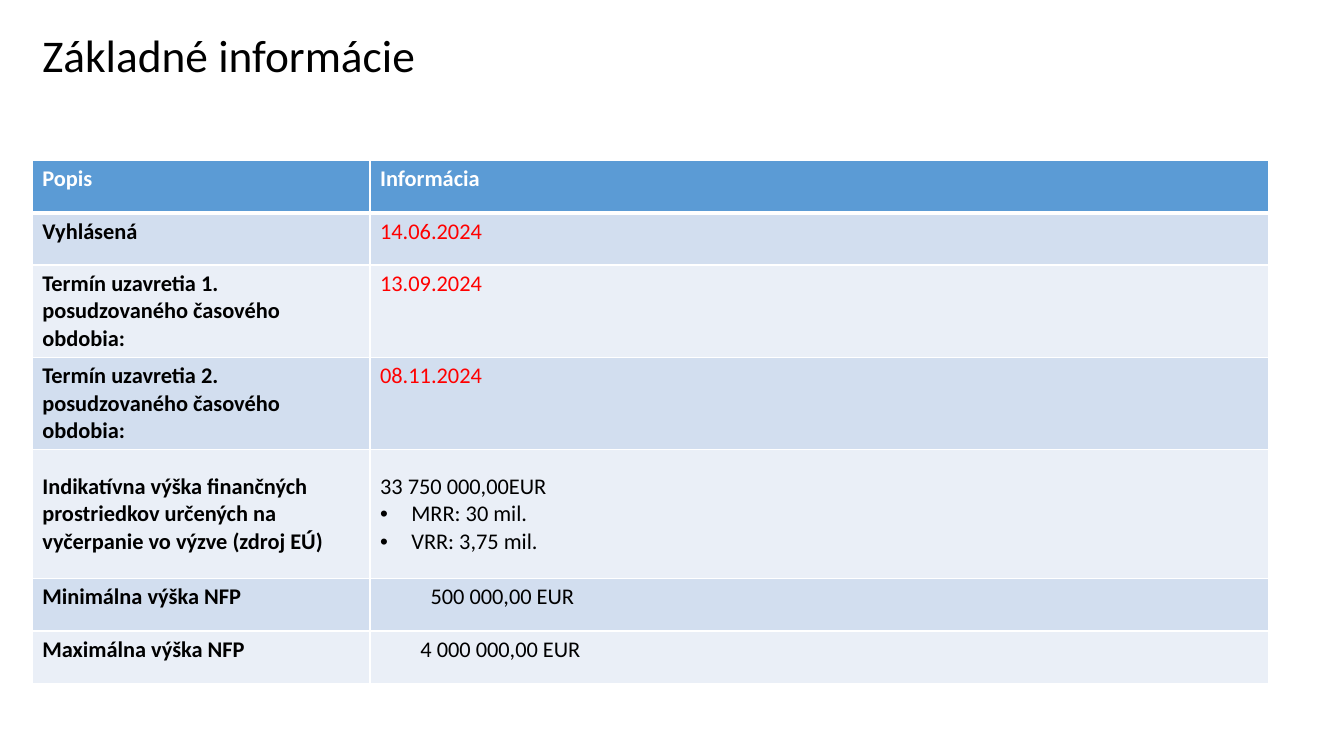
from lxml.etree import SubElement
from pptx import Presentation
from pptx.dml.color import RGBColor
from pptx.enum.text import MSO_ANCHOR, MSO_AUTO_SIZE, PP_ALIGN
from pptx.oxml.ns import qn
from pptx.util import Inches, Pt

COLORS = {"black": "000000", "white": "FFFFFF", "red": "FF0000",
          "header": "5B9BD5", "band_dark": "D2DEEF", "band_light": "EAEFF7"}


def write_text(paragraph, text, size=16, color="black", bold=False, indent=0, bullet=False):
    paragraph.alignment = PP_ALIGN.LEFT
    run = paragraph.add_run()
    run.text = text
    run.font.name = "Calibri"
    run.font.size = Pt(size)
    run.font.bold = bold
    run.font.color.rgb = RGBColor.from_string(COLORS[color])
    properties = paragraph._p.get_or_add_pPr()
    properties.set("marL", str(Inches(indent)))
    if bullet:
        properties.set("indent", str(Inches(-indent)))
        SubElement(properties, qn("a:buFont"), typeface="Arial")
        SubElement(properties, qn("a:buChar"), char="•")


def add_borders(cell, bottom_width):
    properties = cell._tc.get_or_add_tcPr()
    for side, width in (("L", 1), ("R", 1), ("T", 1), ("B", bottom_width)):
        line = SubElement(properties, qn(f"a:ln{side}"), w=str(Pt(width)))
        fill = SubElement(line, qn("a:solidFill"))
        SubElement(fill, qn("a:srgbClr"), val=COLORS["white"])


presentation = Presentation()
presentation.slide_width = Inches(13.33)
presentation.slide_height = Inches(7.5)
slide = presentation.slides.add_slide(presentation.slide_layouts[5])

# Title
title = slide.shapes.title
title.left, title.top = Inches(0.32), Inches(0.32)
title.width, title.height = Inches(10), Inches(0.51)
title.text_frame.auto_size = MSO_AUTO_SIZE.NONE
title.text_frame.vertical_anchor = MSO_ANCHOR.MIDDLE
title.text_frame.paragraphs[0].line_spacing = 0.9
write_text(title.text_frame.paragraphs[0], "Základné informácie", size=32.4)

# Table content: row height, label, lines of information with their format
red = {"color": "red"}
bullet = {"indent": 0.31, "bullet": True}
rows = [
    (0.52, "Popis", [("Informácia", {"color": "white", "bold": True})]),
    (0.52, "Vyhlásená", [("14.06.2024", red)]),
    (0.91, "Termín uzavretia 1. posudzovaného časového obdobia:", [("13.09.2024", red)]),
    (0.91, "Termín uzavretia 2. posudzovaného časového obdobia:", [("08.11.2024", red)]),
    (1.28, "Indikatívna výška finančných prostriedkov určených na vyčerpanie vo výzve (zdroj EÚ)",
     [("33 750 000,00EUR", {}), ("MRR: 30 mil.", bullet), ("VRR: 3,75 mil.", bullet)]),
    (0.52, "Minimálna výška NFP", [("500 000,00 EUR", {"indent": 0.5})]),
    (0.52, "Maximálna výška NFP", [("4 000 000,00 EUR", {"indent": 0.4})]),
]

# Table
table = slide.shapes.add_table(len(rows), 2, Inches(0.32), Inches(1.59),
                               Inches(12.26), Inches(5.18)).table
table.columns[0].width = Inches(3.35)
table.columns[1].width = Inches(8.91)
for row_index, (height, label, information) in enumerate(rows):
    table.rows[row_index].height = Inches(height)
    is_header = row_index == 0
    fill_name = "header" if is_header else ("band_light", "band_dark")[row_index % 2]
    label_format = {"color": "white" if is_header else "black", "bold": True}
    for column_index, lines in enumerate(([(label, label_format)], information)):
        cell = table.cell(row_index, column_index)
        add_borders(cell, bottom_width=3 if is_header else 1)
        cell.fill.solid()
        cell.fill.fore_color.rgb = RGBColor.from_string(COLORS[fill_name])
        cell.vertical_anchor = MSO_ANCHOR.MIDDLE if len(information) > 1 else MSO_ANCHOR.TOP
        for line_index, (text, text_format) in enumerate(lines):
            frame = cell.text_frame
            paragraph = frame.add_paragraph() if line_index else frame.paragraphs[0]
            write_text(paragraph, text, **text_format)

presentation.save("out.pptx")
